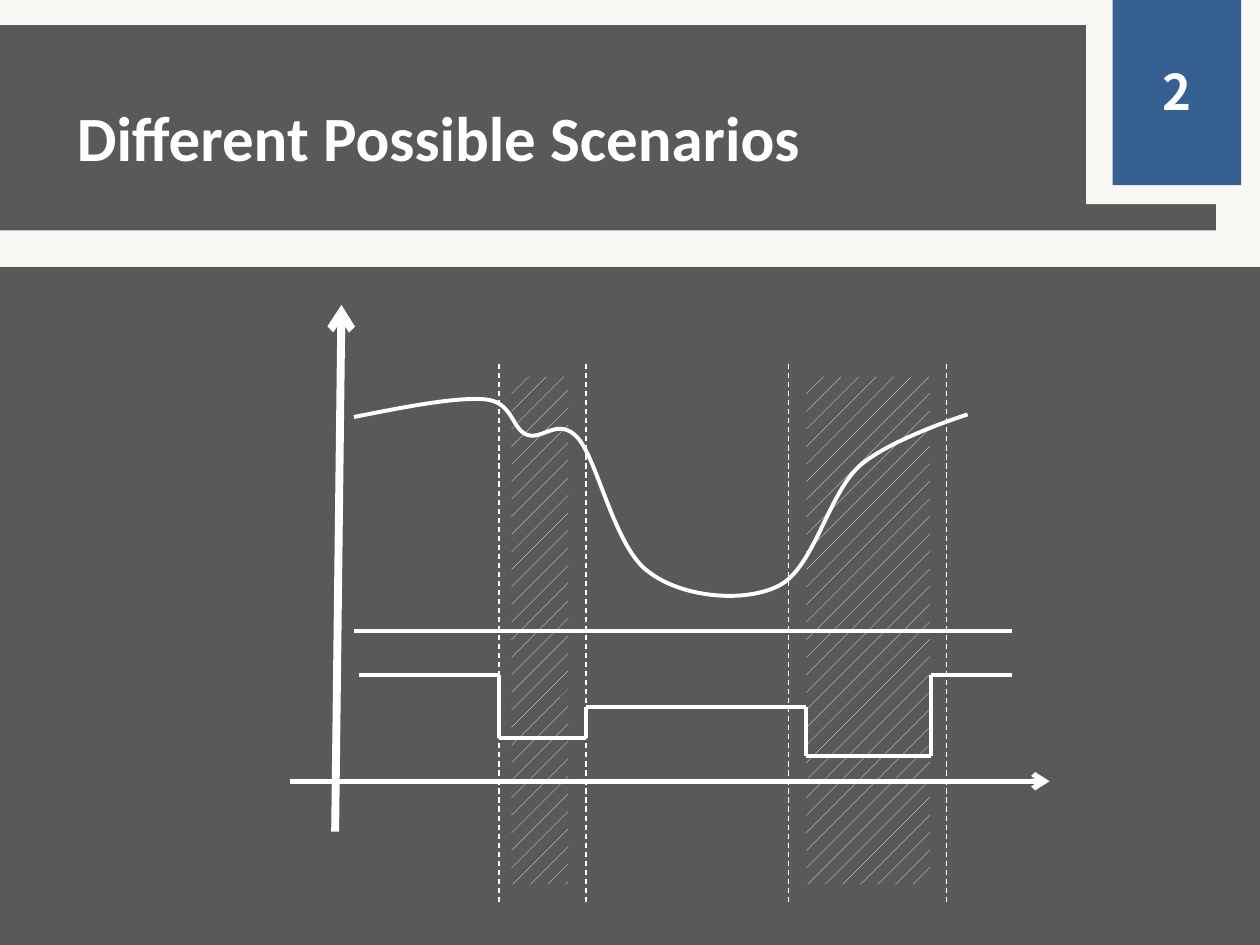
from itertools import pairwise

from lxml.etree import SubElement
from pptx import Presentation
from pptx.dml.color import RGBColor
from pptx.enum.dml import MSO_LINE, MSO_PATTERN
from pptx.enum.shapes import MSO_CONNECTOR, MSO_SHAPE
from pptx.enum.text import MSO_ANCHOR, PP_ALIGN
from pptx.oxml.ns import qn
from pptx.util import Inches, Pt

WHITE = RGBColor(0xFF, 0xFF, 0xFF)
CREAM = RGBColor(0xF9, 0xF8, 0xF5)
GREY = RGBColor(0x59, 0x59, 0x59)
BLUE = RGBColor(0x37, 0x60, 0x92)

SLIDE_W, SLIDE_H = 10, 7.5

# Signal curve: a start point, then two control points and an end per segment
CURVE = [
    (2.81, 3.31),
    (3.21, 3.23), (3.62, 3.15), (3.85, 3.17),
    (4.07, 3.19), (4.06, 3.40), (4.18, 3.45),
    (4.31, 3.50), (4.43, 3.30), (4.59, 3.48),
    (4.75, 3.67), (4.88, 4.35), (5.15, 4.54),
    (5.41, 4.74), (5.90, 4.79), (6.18, 4.65),
    (6.46, 4.51), (6.57, 3.93), (6.82, 3.70),
    (7.07, 3.48), (7.68, 3.29), (7.68, 3.29),
]
# Step line: x where each level starts, and the level's y
LEVELS = [(2.85, 5.36), (3.96, 5.86), (4.65, 5.61), (6.4, 6), (7.39, 5.36)]
STEP_END = 8.03
BOUNDARIES = (3.96, 4.65, 6.26, 7.51)
BANDS = ((4.06, 0.45), (6.4, 0.98))  # left, width


def write(sp, text, size, font, align=PP_ALIGN.LEFT):
    """Put one bold white line of text, vertically centred, in a shape."""
    tf = sp.text_frame
    tf.word_wrap = True
    tf.vertical_anchor = MSO_ANCHOR.MIDDLE
    p = tf.paragraphs[0]
    p.alignment = align
    r = p.add_run()
    r.text = text
    r.font.size, r.font.name, r.font.bold = Pt(size), font, True
    r.font.color.rgb = WHITE


def add_rect(s, x, y, w, h, color, pattern=None):
    sp = s.shapes.add_shape(MSO_SHAPE.RECTANGLE, Inches(x), Inches(y), Inches(w), Inches(h))
    sp.shadow.inherit = False
    sp.line.fill.background()
    if pattern:
        sp.fill.patterned()
        sp.fill.pattern = pattern
        sp.fill.fore_color.rgb = WHITE
        sp.fill.back_color.rgb = color
    else:
        sp.fill.solid()
        sp.fill.fore_color.rgb = color
    return sp


def add_line(shapes, start, end, width=2.25, dash=None, arrow=False):
    line = shapes.add_connector(MSO_CONNECTOR.STRAIGHT, *map(Inches, start + end))
    line.line.color.rgb = WHITE
    line.line.width = Pt(width)
    if dash:
        line.line.dash_style = dash
    if arrow:
        SubElement(line.line._get_or_add_ln(), qn("a:tailEnd"), type="arrow")
    SubElement(line._element.spPr, qn("a:effectLst"))


def add_curve(s, points):
    """Draw an open path, turning every three line steps into one Bezier."""
    start, *rest = [tuple(map(Inches, pt)) for pt in points]
    builder = s.shapes.build_freeform(*start)
    builder.add_line_segments(rest, close=False)
    sp = builder.convert_to_shape()
    path = sp._element.find(".//" + qn("a:path"))
    steps = path.findall(qn("a:lnTo"))
    for i in range(0, len(steps), 3):
        bezier = SubElement(path, qn("a:cubicBezTo"))
        for step in steps[i:i + 3]:
            bezier.append(step[0])
            path.remove(step)
    sp.shadow.inherit = False
    sp.fill.background()
    sp.line.color.rgb = WHITE
    sp.line.width = Pt(2.25)


def add_steps(s):
    corners = []
    ends = [x for x, _ in LEVELS[1:]] + [STEP_END]
    for (x, y), end in zip(LEVELS, ends):
        corners += [(x, y), (end, y)]
    group = s.shapes.add_group_shape()
    for start, end in pairwise(corners):
        add_line(group.shapes, start, end)


def add_header(s):
    add_rect(s, 0, 0.2, 9.65, 1.63, GREY)
    title = s.shapes.title
    title.left, title.top, title.width, title.height = map(Inches, (0.51, 0.28, 8.5, 1.61))
    write(title, "Different Possible Scenarios", 36, "Calibri")
    s.shapes._spTree.append(title._element)  # bring in front of the band
    # Notched corner with the page number
    add_rect(s, 8.62, 0, 1.38, 1.62, CREAM)
    badge = add_rect(s, 8.83, -0.03, 1.02, 1.5, BLUE)
    write(badge, "2", 28, "Noto Sans CJK SC", PP_ALIGN.CENTER)


def add_diagram(s):
    add_rect(s, 0, 2.12, SLIDE_W, SLIDE_H - 2.12, GREY)
    add_line(s.shapes, (2.66, 6.6), (2.71, 2.42), width=4.5, arrow=True)
    # Transition boundaries and bands
    for x in BOUNDARIES:
        add_line(s.shapes, (x, 2.89), (x, 7.16), width=0.75, dash=MSO_LINE.DASH)
    for x, w in BANDS:
        add_rect(s, x, 2.99, w, 4.03, GREY, pattern=MSO_PATTERN.PERCENT_5)
    # Time axis, threshold and signals
    add_line(s.shapes, (2.3, 6.2), (8.33, 6.2), width=3, arrow=True)
    add_line(s.shapes, (2.81, 5.01), (STEP_END, 5.01))
    add_curve(s, CURVE)
    add_steps(s)


def main():
    prs = Presentation()
    prs.slide_width, prs.slide_height = Inches(SLIDE_W), Inches(SLIDE_H)
    s = prs.slides.add_slide(prs.slide_layouts[5])
    s.background.fill.solid()
    s.background.fill.fore_color.rgb = CREAM
    add_header(s)
    add_diagram(s)
    prs.save("out.pptx")


if __name__ == "__main__":
    main()
